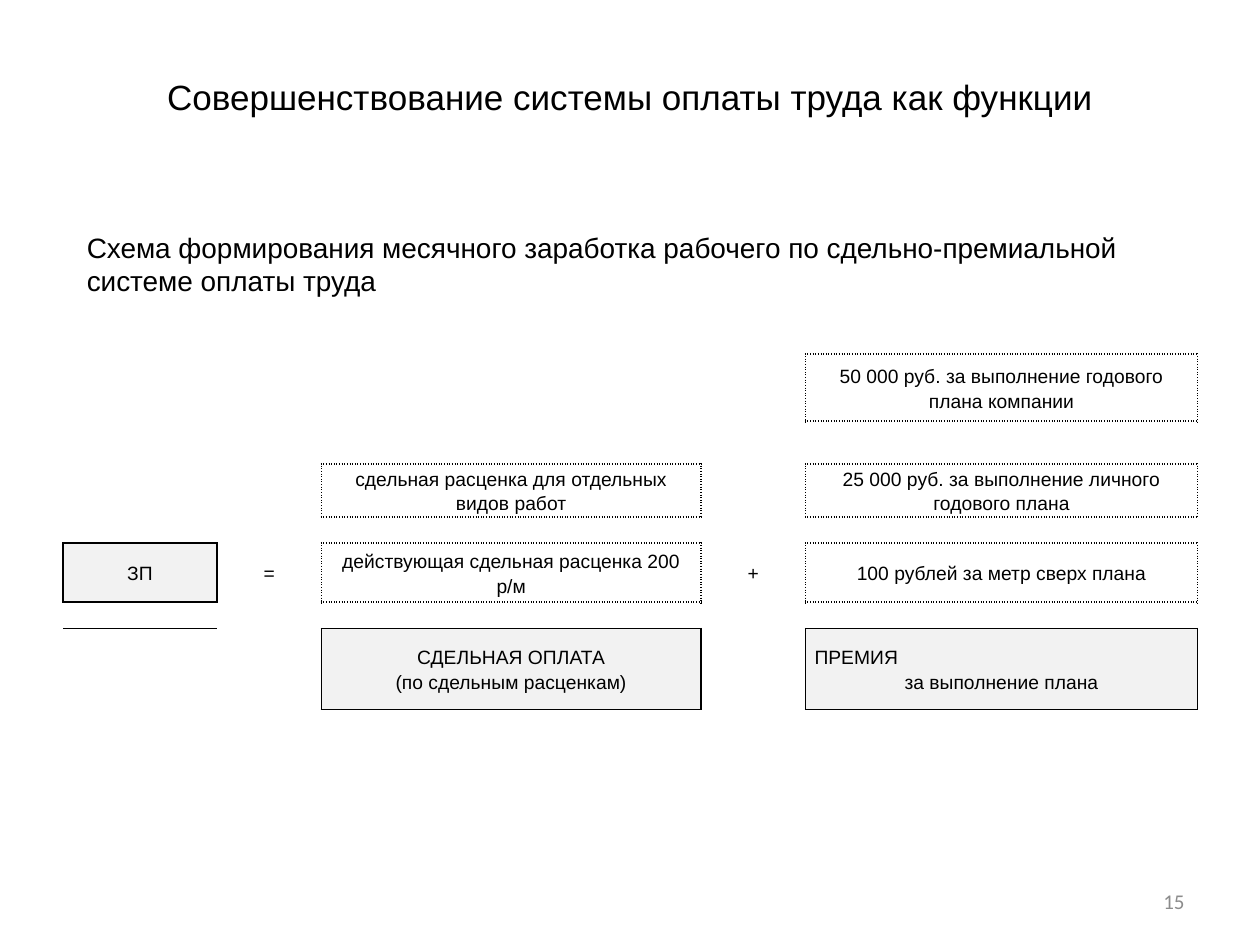
import lxml.etree
import pptx
import pptx.dml.color
import pptx.enum.text
import pptx.oxml.ns
import pptx.util

Cm = pptx.util.Cm
Pt = pptx.util.Pt
RGBColor = pptx.dml.color.RGBColor
Align = pptx.enum.text.PP_ALIGN
Anchor = pptx.enum.text.MSO_ANCHOR

BLACK = RGBColor(0x00, 0x00, 0x00)
GREY = RGBColor(0x8C, 0x8C, 0x8C)
PALE = RGBColor(0xF2, 0xF2, 0xF2)

NO_GRID_STYLE = "{2D5ABB26-0587-4C30-8999-92F81FD0307C}"
TITLE_ONLY = 5
TABLE_SIZE = 11
COLUMN_WIDTHS = [3.1, 2.11, 7.65, 2.11, 7.9]
ROW_HEIGHTS = [1.35, 0.86, 1.07, 0.53, 1.19, 0.53, 1.63]
SIDES = {"L": (0, -1), "R": (0, 1), "T": (-1, 0), "B": (1, 0)}

DETAILS = {
    (0, 4): ["50 000 руб. за выполнение годового плана компании"],
    (2, 2): ["сдельная расценка для отдельных видов работ"],
    (2, 4): ["25 000 руб. за выполнение личного годового плана"],
    (4, 2): ["действующая сдельная расценка 200 р/м"],
    (4, 4): ["100 рублей за метр сверх плана"],
}
TOTALS = {
    (4, 0): ["ЗП"],
    (6, 2): ["СДЕЛЬНАЯ ОПЛАТА", "(по сдельным расценкам)"],
    (6, 4): ["ПРЕМИЯ", "за выполнение плана"],
}
SIGNS = {(4, 1): ["="], (4, 3): ["+"]}
BORDERS = {**dict.fromkeys(DETAILS, "sysDot"), **dict.fromkeys(TOTALS, "solid")}


def apply_format(target, values):
    for name, value in values.items():
        setattr(target, name, value)


def write_paragraph(paragraph, text, size, color=BLACK, font="Arial", **values):
    apply_format(paragraph, values)
    run = paragraph.add_run()
    run.text = text
    apply_format(run.font, {"size": Pt(size), "name": font})
    run.font.color.rgb = color


def place(shape, left, top, width, height):
    apply_format(shape, {"left": Cm(left), "top": Cm(top),
                         "width": Cm(width), "height": Cm(height)})


def add_title(slide, text):
    title = slide.shapes.title
    place(title, 1.27, 0.76, 22.86, 3.18)
    apply_format(title.text_frame, {"vertical_anchor": Anchor.MIDDLE,
                                    "margin_bottom": Cm(0.94)})
    write_paragraph(title.text_frame.paragraphs[0], text, 20, alignment=Align.CENTER)


def add_text(slide, box, text, size, **values):
    shape = slide.shapes.add_textbox(*map(Cm, box))
    apply_format(shape.text_frame, {"word_wrap": True,
                                    "vertical_anchor": Anchor.MIDDLE})
    write_paragraph(shape.text_frame.paragraphs[0], text, size, **values)


def add_border(cell, side, dash):
    qn = pptx.oxml.ns.qn
    properties = cell._tc.get_or_add_tcPr()
    line = lxml.etree.SubElement(properties, qn(f"a:ln{side}"), w=str(Pt(1)))
    fill = lxml.etree.SubElement(line, qn("a:solidFill"))
    lxml.etree.SubElement(fill, qn("a:srgbClr"), val=str(BLACK))
    lxml.etree.SubElement(line, qn("a:prstDash"), val=dash)


def format_cell(cell, position):
    row, column = position
    apply_format(cell, {"vertical_anchor": Anchor.MIDDLE,
                        "margin_left": Cm(0.18), "margin_right": Cm(0.18),
                        "margin_top": 0, "margin_bottom": 0})
    for side, (down, across) in SIDES.items():
        neighbour = BORDERS.get((row + down, column + across))
        dash = BORDERS.get(position, neighbour)
        if dash:
            add_border(cell, side, dash)
    if position in TOTALS:
        cell.fill.solid()
        cell.fill.fore_color.rgb = PALE
    else:
        cell.fill.background()


def write_cell(cell, lines):
    frame = cell.text_frame
    for index, text in enumerate(lines):
        paragraph = frame.add_paragraph() if index else frame.paragraphs[0]
        alignment = Align.LEFT if text == "ПРЕМИЯ" else Align.CENTER
        write_paragraph(paragraph, text, TABLE_SIZE,
                        alignment=alignment, line_spacing=1.15)
    if not lines:
        ending = frame.paragraphs[0]._p.get_or_add_endParaRPr()
        ending.set("sz", str(TABLE_SIZE * 100))


def add_pay_table(slide):
    frame = slide.shapes.add_table(
        len(ROW_HEIGHTS), len(COLUMN_WIDTHS), Cm(1.27), Cm(7.14),
        Cm(sum(COLUMN_WIDTHS)), Cm(sum(ROW_HEIGHTS)))
    table = frame.table
    apply_format(table, {"first_row": False, "horz_banding": False})
    style = table._tbl.tblPr.find(pptx.oxml.ns.qn("a:tableStyleId"))
    style.text = NO_GRID_STYLE
    for column, width in zip(table.columns, COLUMN_WIDTHS):
        column.width = Cm(width)
    texts = {**DETAILS, **TOTALS, **SIGNS}
    for row_index, height in enumerate(ROW_HEIGHTS):
        table.rows[row_index].height = Cm(height)
        for column_index in range(len(COLUMN_WIDTHS)):
            position = (row_index, column_index)
            cell = table.cell(*position)
            format_cell(cell, position)
            write_cell(cell, texts.get(position, []))


def main():
    presentation = pptx.Presentation()
    apply_format(presentation, {"slide_width": Cm(25.4), "slide_height": Cm(19.05)})
    slide = presentation.slides.add_slide(presentation.slide_layouts[TITLE_ONLY])
    add_title(slide, "Совершенствование системы оплаты труда как функции")
    add_pay_table(slide)
    add_text(slide, (1.5, 3.73, 22.86, 3.18),
             "Схема формирования месячного заработка рабочего "
             "по сдельно-премиальной системе оплаты труда", 16)
    add_text(slide, (18.21, 17.65, 5.92, 1.02), "15", 12,
             color=GREY, font="Calibri", alignment=Align.RIGHT)
    presentation.save("out.pptx")


if __name__ == "__main__":
    main()
